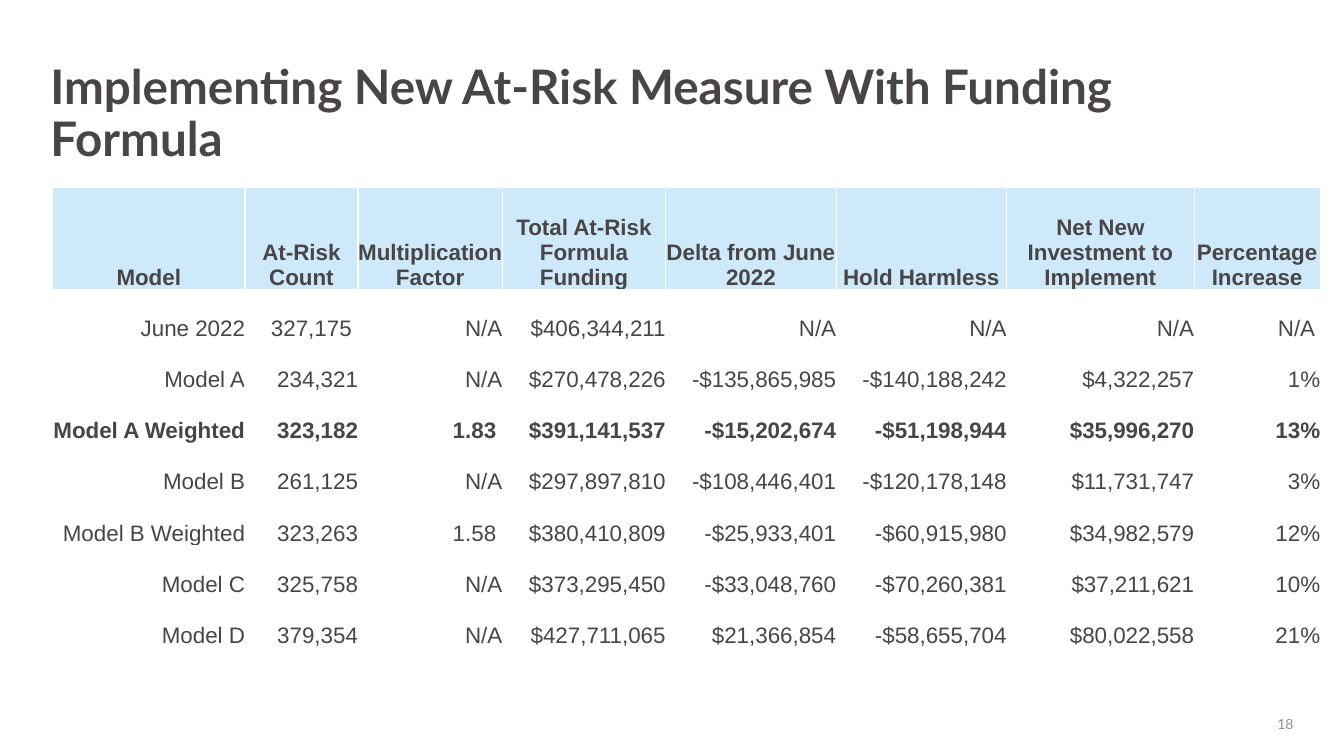
from dataclasses import dataclass

from lxml.etree import SubElement
from pptx import Presentation
from pptx.dml.color import RGBColor
from pptx.enum.text import MSO_ANCHOR, PP_ALIGN
from pptx.oxml.ns import qn
from pptx.util import Inches, Pt

GRID_COLUMNS, GRID_ROWS = 160, 90


@dataclass(frozen=True)
class Theme:
    ink: str = "494546"
    muted: str = "959494"
    header_fill: str = "CEE9F9"
    paper: str = "FFFFFF"
    heading_font: str = "Lato"
    table_font: str = "Arial"
    title_size: int = 34
    table_size: int = 16
    number_size: int = 10
    border_width: int = 1


class SlideBuilder:
    """Places elements on one slide, measured in grid columns and rows."""

    def __init__(self, deck, theme):
        self.theme = theme
        self.slide = deck.slides.add_slide(deck.slide_layouts[6])
        self.column = deck.slide_width / GRID_COLUMNS
        self.row = deck.slide_height / GRID_ROWS

    def box(self, left, top, width, height):
        return (round(left * self.column), round(top * self.row),
                round(width * self.column), round(height * self.row))

    def style(self, paragraph, font, size, color, bold=False, align=PP_ALIGN.LEFT):
        paragraph.alignment = align
        paragraph.font.name = font
        paragraph.font.size = Pt(size)
        paragraph.font.bold = bold
        paragraph.font.color.rgb = RGBColor.from_string(color)

    def text(self, words, place, size, color, bold=False, align=PP_ALIGN.LEFT,
             anchor=MSO_ANCHOR.TOP, padding=0, line_spacing=None):
        frame = self.slide.shapes.add_textbox(*self.box(*place)).text_frame
        frame.word_wrap = True
        frame.vertical_anchor = anchor
        frame.margin_left = frame.margin_right = 0
        frame.margin_top = frame.margin_bottom = Inches(padding)
        paragraph = frame.paragraphs[0]
        paragraph.text = words
        paragraph.line_spacing = line_spacing
        self.style(paragraph, self.theme.heading_font, size, color, bold, align)

    def table(self, records, left, top, widths, heights, bold_rows):
        place = self.box(left, top, sum(widths), sum(heights))
        table = self.slide.shapes.add_table(len(records), len(widths), *place).table
        for column, width in zip(table.columns, widths):
            column.width = round(width * self.column)
        for row, height in zip(table.rows, heights):
            row.height = round(height * self.row)
        for r, record in enumerate(records):
            for c, words in enumerate(record):
                self.fill_cell(table.cell(r, c), words, r == 0, r in bold_rows)

    def fill_cell(self, cell, words, is_header, bold):
        theme = self.theme
        cell.margin_left = cell.margin_right = cell.margin_top = cell.margin_bottom = 0
        cell.vertical_anchor = MSO_ANCHOR.BOTTOM
        self.border(cell)
        cell.fill.solid()
        cell.fill.fore_color.rgb = RGBColor.from_string(
            theme.header_fill if is_header else theme.paper)
        paragraph = cell.text_frame.paragraphs[0]
        paragraph.text = words
        self.style(paragraph, theme.table_font, theme.table_size, theme.ink, bold,
                   PP_ALIGN.CENTER if is_header else PP_ALIGN.RIGHT)

    def border(self, cell):
        properties = cell._tc.get_or_add_tcPr()
        for side in ("a:lnL", "a:lnR", "a:lnT", "a:lnB"):
            line = SubElement(properties, qn(side), w=str(Pt(self.theme.border_width)))
            fill = SubElement(line, qn("a:solidFill"))
            SubElement(fill, qn("a:srgbClr"), val=self.theme.paper)


FUNDING_MODELS = [
    ("Model", "At-Risk Count", "Multiplication Factor", "Total At-Risk Formula Funding",
     "Delta from June 2022", "Hold Harmless", "Net New Investment to Implement",
     "Percentage Increase"),
    ("June 2022", "327,175 ", "N/A", "$406,344,211", "N/A", "N/A", "N/A", " N/A "),
    ("Model A", "234,321", "N/A", "$270,478,226", "-$135,865,985", "-$140,188,242",
     "$4,322,257", "1%"),
    ("Model A Weighted", "323,182", "1.83 ", "$391,141,537", "-$15,202,674",
     "-$51,198,944", "$35,996,270", "13%"),
    ("Model B", "261,125", "N/A", "$297,897,810", "-$108,446,401", "-$120,178,148",
     "$11,731,747", "3%"),
    ("Model B Weighted", "323,263", "1.58 ", "$380,410,809", "-$25,933,401",
     "-$60,915,980", "$34,982,579", "12%"),
    ("Model C", "325,758", "N/A", "$373,295,450", "-$33,048,760", "-$70,260,381",
     "$37,211,621", "10%"),
    ("Model D", "379,354", "N/A", "$427,711,065", "$21,366,854", "-$58,655,704",
     "$80,022,558", "21%"),
]
MODEL_WIDTHS = [22.92, 13.44, 17.2, 19.44, 20.3, 20.3, 22.32, 15]
HEADER_HEIGHT, MODEL_HEIGHT = 12.2, 6.1
HEADER_ROW, CHOSEN_MODEL_ROW = 0, 3


def main():
    deck = Presentation()
    deck.slide_width, deck.slide_height = Inches(13.33), Inches(7.5)
    theme = Theme()
    builder = SlideBuilder(deck, theme)

    builder.text("18", (118, 84.8, 36, 2.8), theme.number_size, theme.muted,
                 align=PP_ALIGN.RIGHT, anchor=MSO_ANCHOR.MIDDLE)
    builder.text("Implementing New At-Risk Measure With Funding Formula",
                 (6, 7, 148, 8.5), theme.title_size, theme.ink, bold=True,
                 padding=0.05, line_spacing=0.9)
    heights = [HEADER_HEIGHT] + [MODEL_HEIGHT] * (len(FUNDING_MODELS) - 1)
    builder.table(FUNDING_MODELS, 6.25, 22.3, MODEL_WIDTHS, heights,
                  bold_rows={HEADER_ROW, CHOSEN_MODEL_ROW})
    deck.save("out.pptx")


if __name__ == "__main__":
    main()
